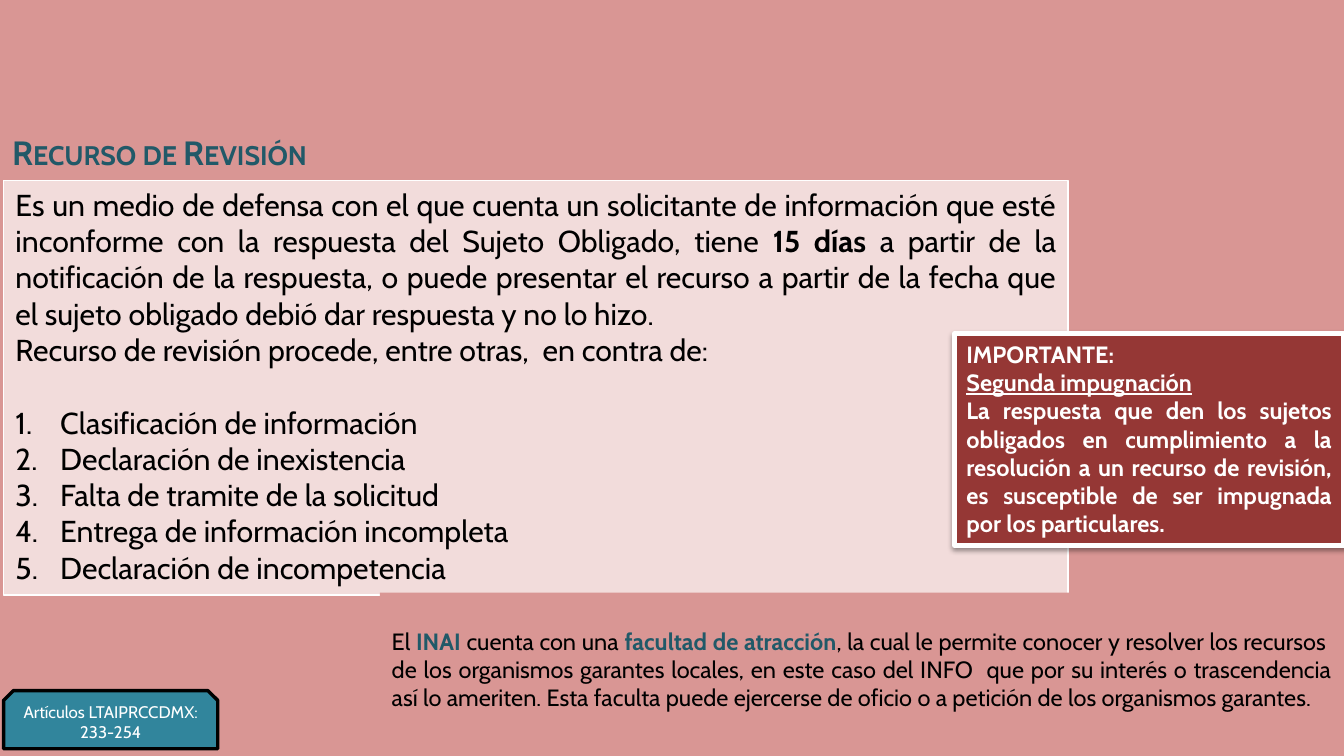
import pptx
import pptx.dml.color
import pptx.enum.shapes
import pptx.enum.text
import pptx.oxml
import pptx.oxml.ns
import pptx.util

Inches = pptx.util.Inches
Pt = pptx.util.Pt
ALIGN = pptx.enum.text.PP_ALIGN
ANCHOR = pptx.enum.text.MSO_ANCHOR
SHAPE = pptx.enum.shapes.MSO_SHAPE
FONT = "Cabin"
COLORS = {
    "rose": "D99694",
    "blush": "F2DCDB",
    "wine": "953735",
    "teal": "31859C",
    "petrol": "215968",
    "white": "FFFFFF",
    "black": "000000",
}
GROUNDS = [
    "Clasificación de información",
    "Declaración de inexistencia",
    "Falta de tramite de la solicitud",
    "Entrega de información incompleta",
    "Declaración de incompetencia",
]


def rgb(name):
    """Return the named palette colour."""
    return pptx.dml.color.RGBColor.from_string(COLORS[name])


def add_panel(slide, box, fill, line=None, width=0.75, kind=SHAPE.RECTANGLE):
    """Add a filled shape with an optional outline."""
    panel = slide.shapes.add_shape(kind, *map(Inches, box))
    panel.shadow.inherit = False
    panel.fill.solid()
    panel.fill.fore_color.rgb = rgb(fill)
    if line:
        panel.line.color.rgb = rgb(line)
        panel.line.width = Pt(width)
    else:
        panel.line.fill.background()
    return panel


def add_run(paragraph, text, size, color, bold=False, underline=False):
    """Append a formatted run to a paragraph."""
    run = paragraph.add_run()
    run.text = text
    run.font.name = FONT
    run.font.size = Pt(size)
    run.font.color.rgb = rgb(color)
    run.font.bold = bold
    run.font.underline = underline
    return run


def write(shape, paragraphs, size, color="black", bold=False,
          align=ALIGN.JUSTIFY, anchor=ANCHOR.TOP, top=0.05):
    """Fill a shape with paragraphs of (text, overrides) runs."""
    frame = shape.text_frame
    frame.word_wrap = True
    frame.auto_size = pptx.enum.text.MSO_AUTO_SIZE.NONE
    frame.vertical_anchor = anchor
    frame.margin_left = frame.margin_right = Inches(0.1)
    frame.margin_top, frame.margin_bottom = Inches(top), Inches(0.05)
    for index, runs in enumerate(paragraphs):
        paragraph = frame.add_paragraph() if index else frame.paragraphs[0]
        paragraph.alignment = align
        for text, overrides in runs:
            add_run(paragraph, text, **{"size": size, "color": color, "bold": bold, **overrides})


def add_numbered(shape, items, size, gap):
    """Append a numbered list, set off by a gap above its first item."""
    for index, item in enumerate(items):
        paragraph = shape.text_frame.add_paragraph()
        paragraph.alignment = ALIGN.LEFT
        if index == 0:
            paragraph.space_before = Pt(gap)
        properties = paragraph._p.get_or_add_pPr()
        properties.set("marL", str(Inches(0.37)))
        properties.set("indent", str(-Inches(0.37)))
        number = pptx.oxml.parse_xml(
            f'<a:buAutoNum {pptx.oxml.ns.nsdecls("a")} type="arabicPeriod"/>')
        properties.append(number)
        add_run(paragraph, item, size, "black")


def add_drop_shadow(shape, blur, distance, opacity):
    """Give a shape a soft shadow falling straight down."""
    effects = shape._element.spPr.find(pptx.oxml.ns.qn("a:effectLst"))
    effects.append(pptx.oxml.parse_xml(
        f'<a:outerShdw {pptx.oxml.ns.nsdecls("a")} blurRad="{Pt(blur)}" '
        f'dist="{Pt(distance)}" dir="5400000" rotWithShape="0">'
        f'<a:srgbClr val="{COLORS["black"]}"><a:alpha val="{opacity * 1000}"/>'
        '</a:srgbClr></a:outerShdw>'))


def add_title(slide, text):
    """Place the small-caps title."""
    title = slide.shapes.title
    title.left, title.top, title.width, title.height = map(Inches, (0, 1.04, 5, 0.77))
    write(title, [[(text, {})]], 20, "petrol", bold=True, align=ALIGN.LEFT)
    title.text_frame.paragraphs[0].runs[0].font._element.set("cap", "small")


def main():
    """Build the slide and save it."""
    deck = pptx.Presentation()
    deck.slide_width, deck.slide_height = Inches(11.11), Inches(6.25)
    slide = deck.slides.add_slide(deck.slide_layouts[5])
    slide.background.fill.solid()
    slide.background.fill.fore_color.rgb = rgb("rose")
    add_title(slide, "Recurso de Revisión")

    definition = add_panel(slide, (0.03, 1.49, 8.8, 3.43), "blush", "white")
    write(definition, [
        [("Es un medio de defensa con el que cuenta un solicitante de información que esté "
          "inconforme con la respuesta del Sujeto Obligado, tiene ", {}),
         ("15 días ", {"bold": True}),
         ("a partir de la notificación de la respuesta, o puede presentar el recurso a partir "
          "de la fecha que el sujeto obligado debió dar respuesta y no lo hizo.", {})],
        [("Recurso de revisión procede, entre otras,  en contra de:", {})],
    ], 18)
    definition.text_frame.paragraphs[1].alignment = ALIGN.LEFT
    add_numbered(definition, GROUNDS, 18, gap=21.6)

    important = add_panel(slide, (7.89, 2.76, 3.22, 1.75), "wine", "white", 3)
    add_drop_shadow(important, blur=3.1, distance=1.6, opacity=38)
    write(important, [
        [("IMPORTANTE: ", {})],
        [("Segunda impugnación", {"underline": True})],
        [("La respuesta que den los sujetos obligados en cumplimiento a la resolución a un "
          "recurso de revisión, es susceptible de ser impugnada por los particulares.", {})],
    ], 14, "white", bold=True)

    articles = add_panel(slide, (0.03, 5.71, 1.77, 0.48), "teal", "black", 2,
                         SHAPE.SNIP_2_SAME_RECTANGLE)
    write(articles, [[("Artículos LTAIPRCCDMX: 233-254", {})]], 10, "white",
          align=ALIGN.CENTER, anchor=ANCHOR.MIDDLE)

    attraction = add_panel(slide, (3.14, 4.9, 7.97, 1.28), "rose")
    accent = {"color": "petrol", "bold": True}
    write(attraction, [[
        ("El ", {}),
        ("INAI ", accent),
        ("cuenta con una ", {}),
        ("facultad de atracción", accent),
        (", la cual le permite conocer y resolver los recursos  de los organismos garantes "
         "locales, en este caso del INFO  que por su interés o trascendencia así lo ameriten. "
         "Esta faculta puede ejercerse de oficio o a petición de los organismos garantes. ", {}),
    ]], 14, top=0.28)

    deck.save("out.pptx")


if __name__ == "__main__":
    main()
